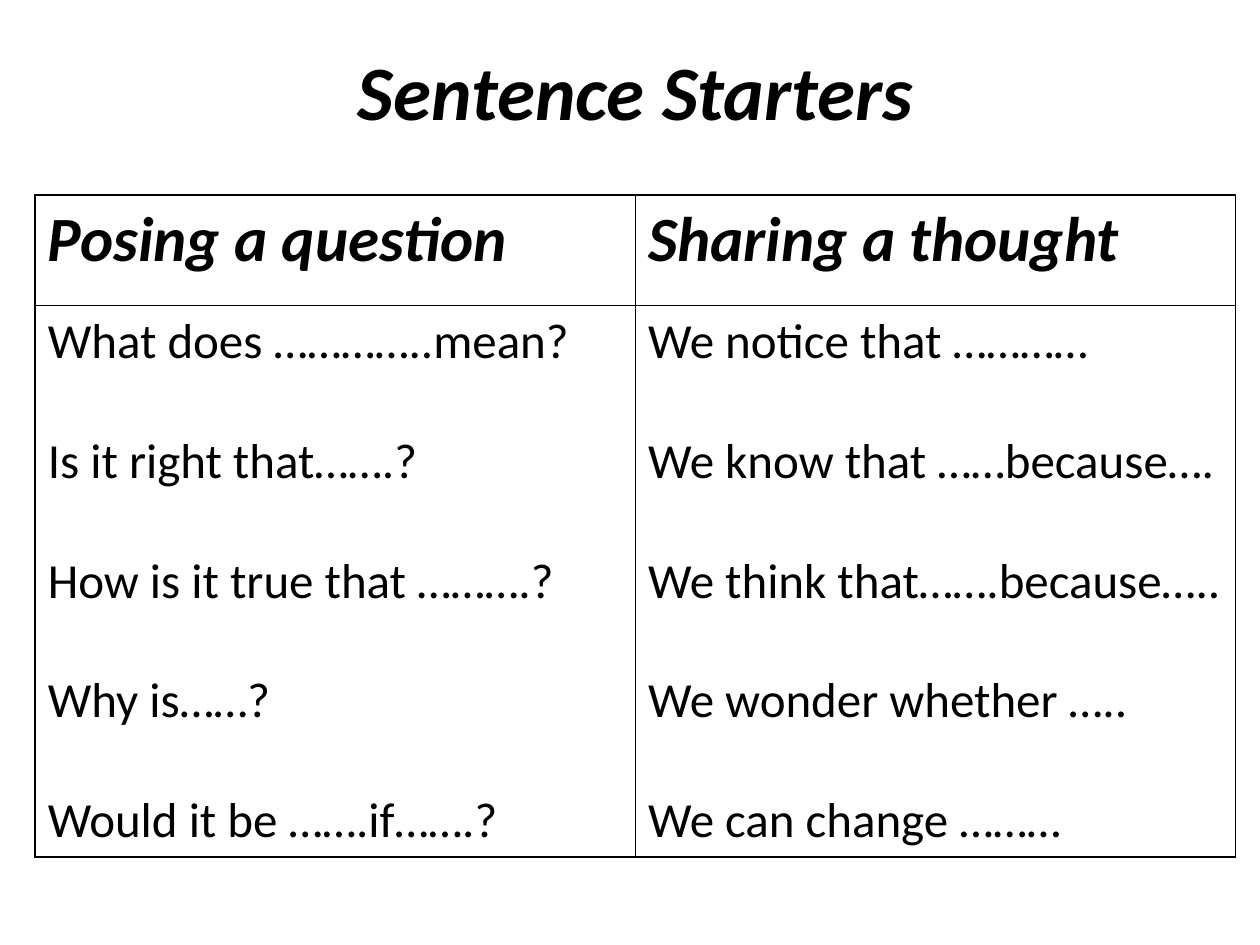
import pptx
import pptx.dml.color
import pptx.enum.text
import pptx.oxml
import pptx.oxml.ns
import pptx.util

Cm = pptx.util.Cm
Pt = pptx.util.Pt
COLORS = {"text": "000000", "border": "000000"}
FONT = "Calibri"
columns = [
    ("Posing a question", [
        "What does …………..mean?",
        "Is it right that…….?",
        "How is it true that ……….?",
        "Why is……?",
        "Would it be …….if…….?",
    ]),
    ("Sharing a thought", [
        "We notice that …………",
        "We know that ……because….",
        "We think that…….because…..",
        "We wonder whether …..",
        "We can change ………",
    ]),
]


def add_run(p, text, size, strong):
    r = p.add_run()
    r.text = text
    r.font.name = FONT
    r.font.size = Pt(size)
    r.font.bold = strong
    r.font.italic = strong
    r.font.color.rgb = pptx.dml.color.RGBColor.from_string(COLORS["text"])


def add_borders(cell):
    tcPr = cell._tc.get_or_add_tcPr()
    for side in ("lnL", "lnR", "lnT", "lnB"):
        tcPr.append(pptx.oxml.parse_xml(
            f'<a:{side} {pptx.oxml.ns.nsdecls("a")} w="{Pt(1)}"><a:solidFill>'
            f'<a:srgbClr val="{COLORS["border"]}"/></a:solidFill></a:{side}>'))


prs = pptx.Presentation()
prs.slide_width = Cm(25.4)
prs.slide_height = Cm(19.05)
s = prs.slides.add_slide(prs.slide_layouts[5])

left, width = Cm(0.71), Cm(24.2)
title = s.shapes.title
title.left, title.top, title.width, title.height = left, Cm(0.74), width, Cm(2.14)
p = title.text_frame.paragraphs[0]
p.alignment = pptx.enum.text.PP_ALIGN.CENTER
add_run(p, "Sentence Starters", 44, True)

row_heights = [Cm(2.23), Cm(11.12)]
table = s.shapes.add_table(2, len(columns), left, Cm(3.93), width, sum(row_heights)).table
table.first_row = False
table.horz_banding = False
for row, height in zip(table.rows, row_heights):
    row.height = height

for c, (heading, starters) in enumerate(columns):
    table.columns[c].width = width // len(columns)
    for r in range(2):
        cell = table.cell(r, c)
        add_borders(cell)
        cell.fill.background()
    add_run(table.cell(0, c).text_frame.paragraphs[0], heading, 36, True)
    tf = table.cell(1, c).text_frame
    for i, starter in enumerate(starters):
        p = tf.add_paragraph() if i else tf.paragraphs[0]
        p.space_before = Pt(34.2 if i else 0)
        add_run(p, starter, 28, False)

prs.save("out.pptx")
